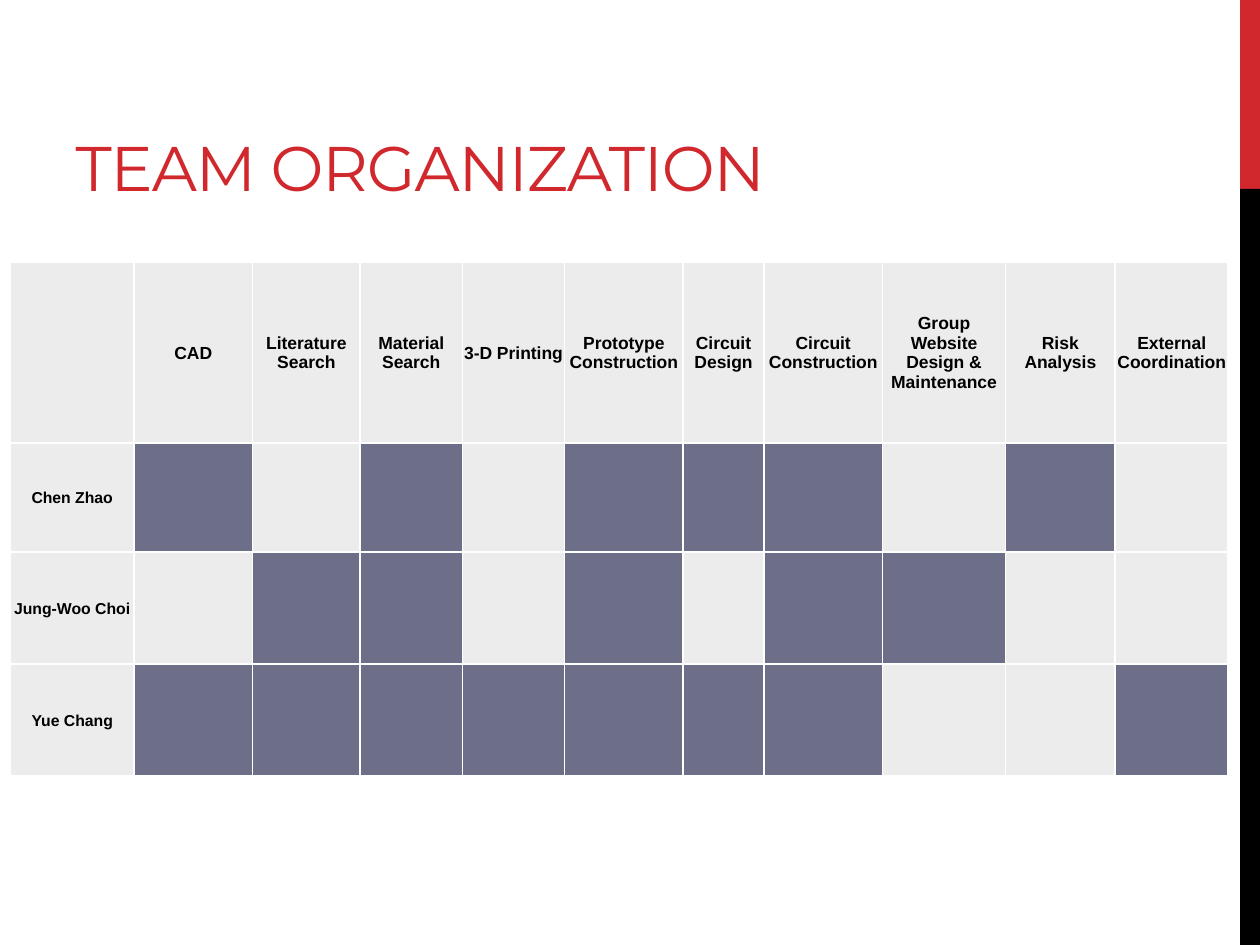
from lxml import etree
from pptx import Presentation
from pptx import util as u
from pptx.dml.color import RGBColor
from pptx.enum import shapes, text
from pptx.oxml.ns import qn

RED, BLACK, WHITE = "D1282E", "000000", "FFFFFF"
EMPTY, ASSIGNED = "ECECEC", "6C6F87"


def paint(fill, color):
    fill.solid()
    fill.fore_color.rgb = RGBColor.from_string(color)


def add_run(paragraph, words, font, size, color, bold=False):
    run = paragraph.add_run()
    run.text = words
    run.font.name = font
    run.font.size = u.Pt(size)
    run.font.bold = bold
    paint(run.font.fill, color)
    return run


presentation = Presentation()
presentation.slide_width, presentation.slide_height = u.Cm(25.4), u.Cm(19.05)
slide = presentation.slides.add_slide(presentation.slide_layouts[5])

# Side bar in two colours
for top, height, color in [(0, 3.81, RED), (3.81, 15.24, BLACK)]:
    bar = slide.shapes.add_shape(shapes.MSO_SHAPE.RECTANGLE,
                                 u.Cm(25), u.Cm(top), u.Cm(0.4), u.Cm(height))
    bar.shadow.inherit = False
    paint(bar.fill, color)
    bar.line.fill.background()

# Title
title = slide.shapes.title
title.left, title.top = u.Cm(1.27), u.Cm(0.43)
title.width, title.height = u.Cm(16.08), u.Cm(3.81)
frame = title.text_frame
frame.auto_size = text.MSO_AUTO_SIZE.NONE
frame.vertical_anchor = text.MSO_ANCHOR.BOTTOM
frame.paragraphs[0].alignment = text.PP_ALIGN.LEFT
run = add_run(frame.paragraphs[0], "TEAM ORGANIZATION", "Montserrat", 36, RED)
run.font._element.set("spc", "-60")

# Tasks, and who works on which (x = assigned)
tasks = ["", "CAD", "Literature Search", "Material Search", "3-D Printing",
         "Prototype Construction", "Circuit Design", "Circuit Construction",
         "Group Website Design & Maintenance", "Risk Analysis",
         "External Coordination"]
members = {
    "Chen Zhao": "x.x.xxx.x.",
    "Jung-Woo Choi": ".xx.x.xx..",
    "Yue Chang": "xxxxxxx..x",
}
column_widths = [2.49, 2.39, 2.17, 2.06, 2.06, 2.39, 1.63, 2.39, 2.48, 2.21, 2.28]
row_heights = [3.64, 2.2, 2.26, 2.26]

# Responsibility table
table = slide.shapes.add_table(
    len(row_heights), len(column_widths), u.Cm(0.21), u.Cm(5.29),
    u.Cm(sum(column_widths)), u.Cm(sum(row_heights))).table
table.first_row = table.horz_banding = False
for column, width in zip(table.columns, column_widths):
    column.width = u.Cm(width)
for row, height in zip(table.rows, row_heights):
    row.height = u.Cm(height)

rows = [tasks] + [[name, *marks] for name, marks in members.items()]
for r, values in enumerate(rows):
    for c, value in enumerate(values):
        cell = table.cell(r, c)
        cell.margin_left = cell.margin_right = cell.margin_top = u.Cm(0.02)
        cell.margin_bottom = 0
        cell.vertical_anchor = text.MSO_ANCHOR.MIDDLE

        # Thin white borders come before the fill in the cell's XML
        properties = cell._tc.get_or_add_tcPr()
        for side in ("a:lnL", "a:lnR", "a:lnT", "a:lnB"):
            line = etree.SubElement(properties, qn(side), w=str(u.Pt(1)))
            solid = etree.SubElement(line, qn("a:solidFill"))
            etree.SubElement(solid, qn("a:srgbClr"), val=WHITE)
        paint(cell.fill, ASSIGNED if value == "x" else EMPTY)

        if value and (r == 0 or c == 0):
            paragraph = cell.text_frame.paragraphs[0]
            paragraph.alignment = text.PP_ALIGN.CENTER
            add_run(paragraph, value, "Arial", 10 if r == 0 else 9, BLACK, bold=True)

presentation.save("out.pptx")
